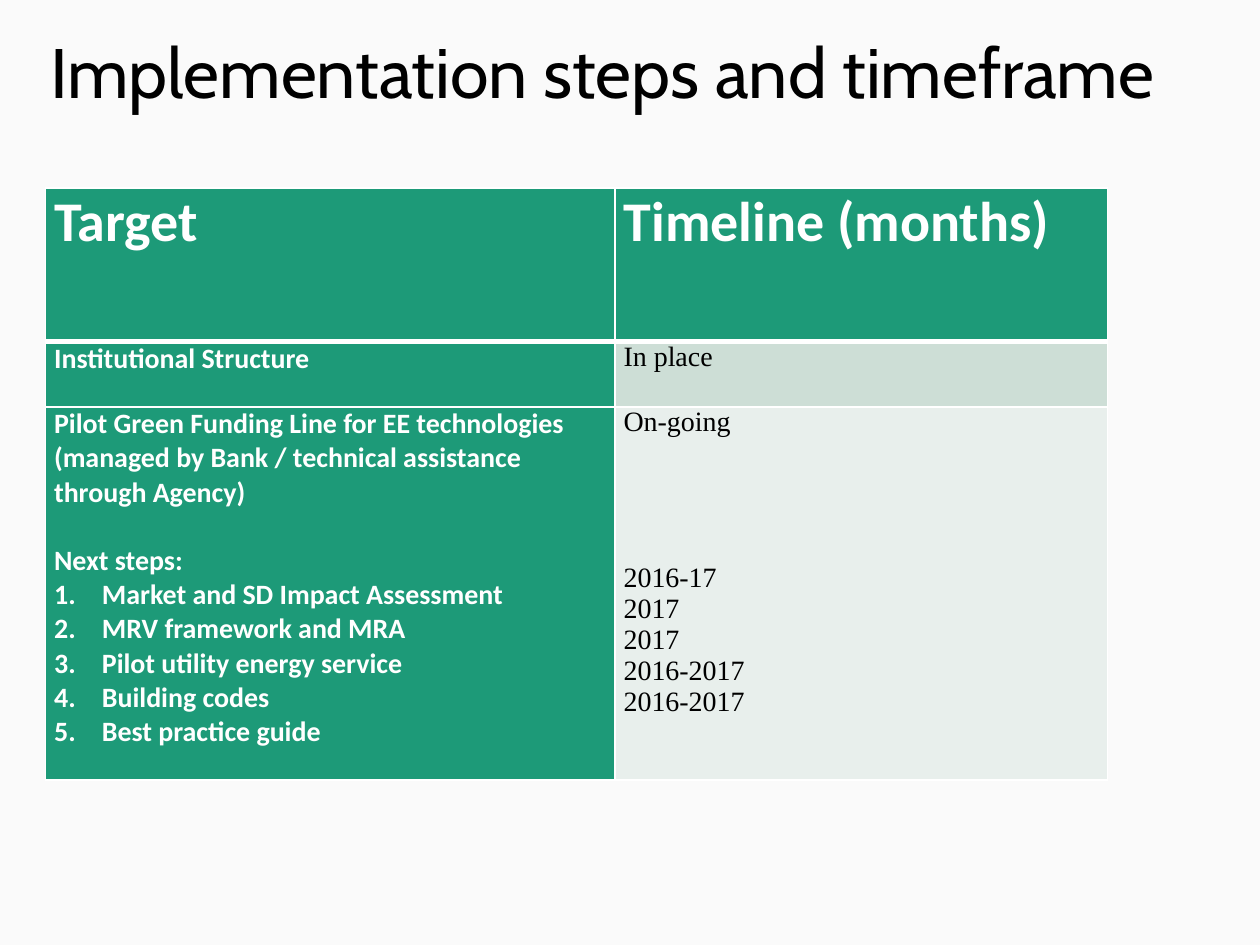
from pptx import Presentation
from pptx import util as u
from pptx.dml.color import RGBColor
from pptx.enum import text as t
from pptx.oxml import parse_xml
from pptx.oxml.ns import nsdecls

BACK = RGBColor(0xFA, 0xFA, 0xFA)
GREEN = RGBColor(0x1D, 0x9A, 0x78)
MINT = RGBColor(0xCD, 0xDE, 0xD6)
PALE = RGBColor(0xE8, 0xEF, 0xEC)
WHITE = RGBColor(0xFF, 0xFF, 0xFF)
BLACK = RGBColor(0, 0, 0)

COLS = [4.52, 3.91]
ROWS = [1.22, 0.52, 2.96]
STEPS = [
    ("Market and SD Impact Assessment", "2016-17"),
    ("MRV framework and MRA", "2017"),
    ("Pilot utility energy service", "2017"),
    ("Building codes", "2016-2017"),
    ("Best practice guide", "2016-2017"),
]
PILOT = ("Pilot Green Funding Line for EE technologies "
         "(managed by Bank / technical assistance through Agency)")
TASKS = [PILOT, "Next steps:"] + [task for task, date in STEPS]
DATES = ["On-going"] + [date for task, date in STEPS]
CELLS = [
    [["Target"], ["Timeline (months)"]],
    [["Institutional Structure"], ["In place"]],
    [TASKS, DATES],
]


def add_title(slide, left, top, width, height):
    title = slide.shapes.title
    title.left, title.top = u.Inches(left), u.Inches(top)
    title.width, title.height = u.Inches(width), u.Inches(height)
    frame = title.text_frame
    frame.text = "Implementation steps and timeframe"
    frame.vertical_anchor = t.MSO_ANCHOR.MIDDLE
    frame.word_wrap = True
    para = frame.paragraphs[0]
    para.alignment = t.PP_ALIGN.LEFT
    para.line_spacing = 0.9
    para.font.name, para.font.size = "Cabin", u.Pt(40)
    para.font.color.rgb = BLACK


def set_edges(cell, base):
    props = cell._tc.get_or_add_tcPr()
    edges = {"lnL": 1, "lnR": 1, "lnT": 1, "lnB": base}
    for spot, (tag, size) in enumerate(edges.items()):
        props.insert(spot, parse_xml(
            f'<a:{tag} {nsdecls("a")} w="{u.Pt(size)}"><a:solidFill>'
            f'<a:srgbClr val="{WHITE}"/></a:solidFill></a:{tag}>'))


def set_number(para):
    props = para._p.get_or_add_pPr()
    props.set("marL", str(u.Inches(0.38)))
    props.set("indent", str(u.Inches(-0.38)))
    props.append(parse_xml(
        f'<a:buAutoNum {nsdecls("a")} type="arabicPeriod"/>'))


def fill_cell(cell, lines, fill, face, size, color, bold):
    cell.fill.solid()
    cell.fill.fore_color.rgb = fill
    cell.margin_left = cell.margin_right = u.Inches(0.07)
    cell.margin_top = cell.margin_bottom = 0
    cell.text_frame.text = "\n".join(lines)
    for para in cell.text_frame.paragraphs:
        font = para.font
        font.name, font.size, font.bold = face, u.Pt(size), bold
        font.color.rgb = color


def add_plan(slide, left, top):
    frame = slide.shapes.add_table(
        len(ROWS), len(COLS), u.Inches(left), u.Inches(top),
        u.Inches(sum(COLS)), u.Inches(sum(ROWS)))
    table = frame.table
    for col, width in zip(table.columns, COLS):
        col.width = u.Inches(width)
    for row, height in zip(table.rows, ROWS):
        row.height = u.Inches(height)
    for r, row in enumerate(CELLS):
        for c, lines in enumerate(row):
            cell = table.cell(r, c)
            if r == 0 or c == 0:
                size = 32 if r == 0 else 16
                fill_cell(cell, lines, GREEN, "Calibri", size, WHITE, True)
            else:
                fill = MINT if r == 1 else PALE
                fill_cell(cell, lines, fill, "Times New Roman", 16,
                          BLACK, False)
            set_edges(cell, 3 if r == 0 else 1)
    tasks = table.cell(2, 0).text_frame.paragraphs
    tasks[1].space_before = u.Pt(19.5)
    for para in tasks[2:]:
        set_number(para)
    table.cell(2, 1).text_frame.paragraphs[1].space_before = u.Pt(71)


def main():
    deck = Presentation()
    deck.slide_width, deck.slide_height = u.Inches(10), u.Inches(7.5)
    slide = deck.slides.add_slide(deck.slide_layouts[5])
    slide.background.fill.solid()
    slide.background.fill.fore_color.rgb = BACK
    add_title(slide, 0.3, 0, 9.37, 1.21)
    add_plan(slide, 0.36, 1.49)
    deck.save("out.pptx")


if __name__ == "__main__":
    main()
